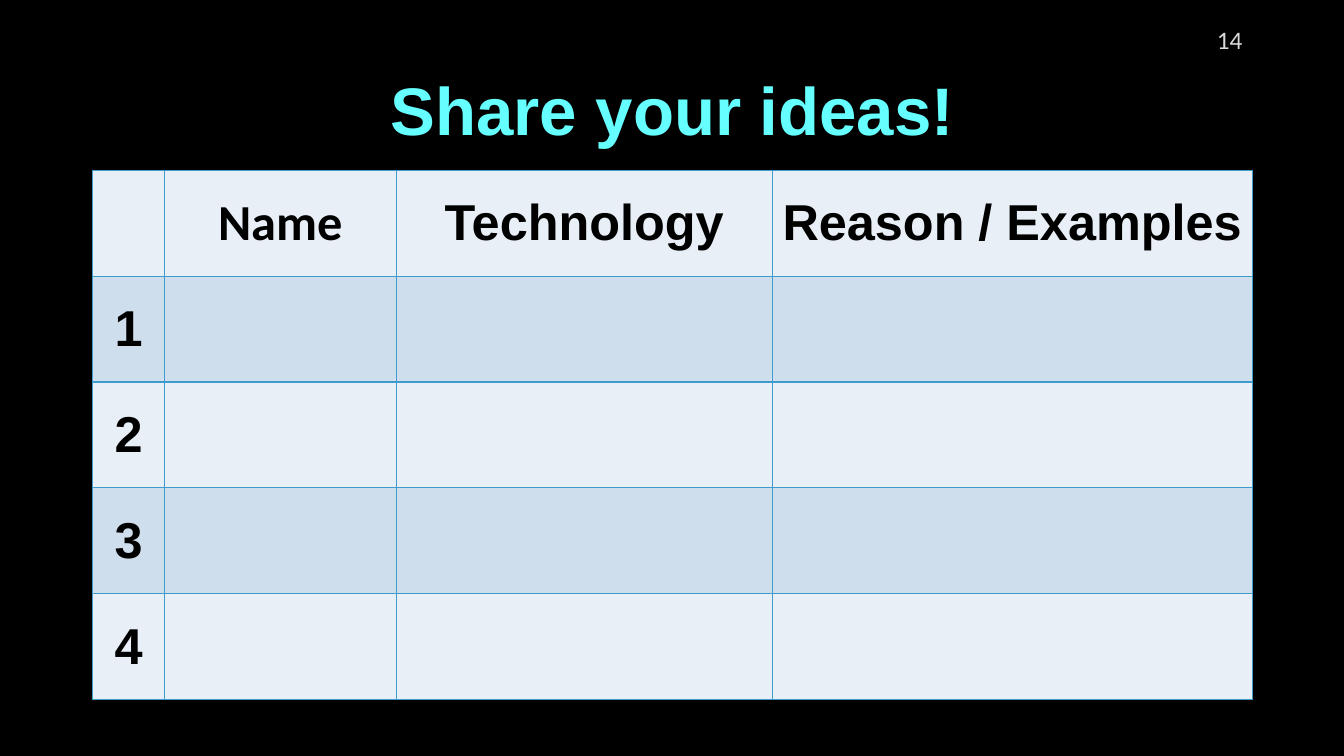
from lxml import etree
from pptx import Presentation
from pptx.dml.color import RGBColor
from pptx.enum import text
from pptx.oxml import ns
from pptx.util import Inches, Pt

HEADERS = ["", "Name", "Technology", "Reason / Examples"]
COL_WIDTHS = [0.71, 2.3, 3.73, 4.76]
ROW_COUNT = 4
ROW_HEIGHT = 1.05
BANDS = ["E8EFF6", "CEDEEC"]


def paint(fill, color):
    """Give a fill one solid colour."""
    fill.solid()
    fill.fore_color.rgb = RGBColor.from_string(color)


def write(tf, content, size, color, align, font="Arial", bold=False):
    """Put one formatted run in the first paragraph of a text frame."""
    p = tf.paragraphs[0]
    p.alignment = align
    r = p.add_run()
    r.text = content
    r.font.name = font
    r.font.size = Pt(size)
    r.font.bold = bold
    r.font.color.rgb = RGBColor.from_string(color)
    return p


def add_borders(cell, color):
    """Draw a one-point line on each side of a cell."""
    tc_pr = cell._tc.get_or_add_tcPr()
    for i, side in enumerate(("a:lnL", "a:lnR", "a:lnT", "a:lnB")):
        ln = etree.Element(ns.qn(side), w=str(Pt(1)))
        fill = etree.SubElement(ln, ns.qn("a:solidFill"))
        etree.SubElement(fill, ns.qn("a:srgbClr"), val=color)
        tc_pr.insert(i, ln)


def add_title(s, content):
    """Place and format the slide title."""
    sp = s.shapes.title
    sp.left, sp.top, sp.width, sp.height = map(Inches, (0.92, 0.4, 11.5, 1.45))
    tf = sp.text_frame
    tf.vertical_anchor = text.MSO_ANCHOR.MIDDLE
    p = write(tf, content, 48, "66FFFF", text.PP_ALIGN.CENTER, bold=True)
    p.line_spacing = 0.9


def add_page_number(s, number):
    """Add the page number at the top right."""
    sp = s.shapes.add_textbox(*map(Inches, (11.81, 0.19, 0.61, 0.4)))
    tf = sp.text_frame
    tf.word_wrap = True
    write(tf, number, 18, "D9D9D9", text.PP_ALIGN.RIGHT, font="Calibri")


def add_ideas_table(s):
    """Add the banded table with headers and numbered rows."""
    rows = [HEADERS] + [[str(n), "", "", ""] for n in range(1, ROW_COUNT + 1)]
    frame = s.shapes.add_table(
        len(rows), len(HEADERS), Inches(0.92), Inches(1.69),
        Inches(sum(COL_WIDTHS)), Inches(ROW_HEIGHT * len(rows)))
    table = frame.table
    for column, width in zip(table.columns, COL_WIDTHS):
        column.width = Inches(width)
    for i, values in enumerate(rows):
        table.rows[i].height = Inches(ROW_HEIGHT)
        for j, value in enumerate(values):
            cell = table.cell(i, j)
            paint(cell.fill, BANDS[i % 2])
            add_borders(cell, "3D9CCC")
            cell.vertical_anchor = text.MSO_ANCHOR.MIDDLE
            cell.margin_left = cell.margin_right = Inches(0.08)
            if value:
                font = "Calibri" if value == "Name" else "Arial"
                write(cell.text_frame, value, 36, "000000",
                      text.PP_ALIGN.CENTER, font, bold=True)


def main():
    """Build the slide and save it."""
    prs = Presentation()
    prs.slide_width, prs.slide_height = Inches(13.33), Inches(7.5)
    s = prs.slides.add_slide(prs.slide_layouts[5])
    paint(s.background.fill, "000000")
    add_page_number(s, "14")
    add_title(s, "Share your ideas!")
    add_ideas_table(s)
    prs.save("out.pptx")


if __name__ == "__main__":
    main()
